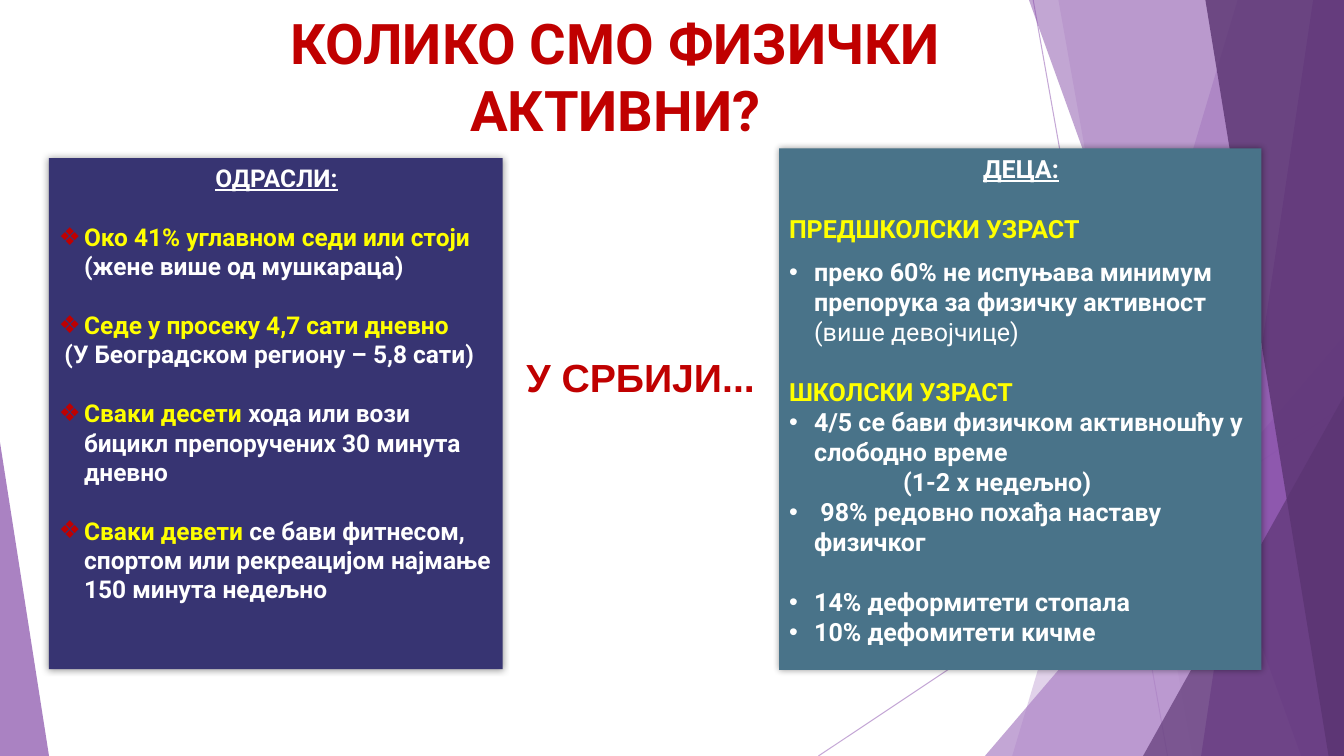
from lxml import etree
from pptx import Presentation
from pptx.dml.color import RGBColor
from pptx.enum.shapes import MSO_CONNECTOR, MSO_SHAPE
from pptx.enum.text import MSO_ANCHOR, PP_ALIGN
from pptx.oxml.ns import qn
from pptx.util import Pt

STRAIGHT = MSO_CONNECTOR.STRAIGHT
RECTANGLE = MSO_SHAPE.RECTANGLE
TRIANGLE = MSO_SHAPE.ISOSCELES_TRIANGLE
TOP, MIDDLE = MSO_ANCHOR.TOP, MSO_ANCHOR.MIDDLE
CENTER, LEFT = PP_ALIGN.CENTER, PP_ALIGN.LEFT

WHITE = RGBColor(0xFF, 0xFF, 0xFF)
YELLOW = RGBColor(0xFF, 0xFF, 0x00)
RED = RGBColor(0xC0, 0x00, 0x00)
NAVY = RGBColor(0x37, 0x34, 0x72)
TEAL = RGBColor(0x49, 0x73, 0x89)
LILAC = RGBColor(0xAD, 0x84, 0xC6)
PURPLE = RGBColor(0x87, 0x4E, 0xA9)
PLUM = RGBColor(0x5A, 0x34, 0x71)

WIDTH, HEIGHT = 960, 540
HANG = 18


def add_child(parent, tag, **attributes):
    child = etree.SubElement(parent, qn(tag))
    for name, value in attributes.items():
        child.set(name, str(value))
    return child


def set_opacity(fill, percent):
    for color in fill.iter(qn("a:srgbClr")):
        add_child(color, "a:alpha", val=percent * 1000)


def paint(shape, color, opacity=100):
    shape.shadow.inherit = False
    shape.fill.solid()
    shape.fill.fore_color.rgb = color
    shape.line.fill.background()
    if opacity < 100:
        set_opacity(shape.fill._xPr, opacity)


def add_ray(page, start, end):
    ray = page.shapes.add_connector(STRAIGHT, *map(Pt, start + end))
    ray.line.color.rgb = LILAC
    ray.line.width = Pt(0.75)
    properties = ray._element.spPr
    set_opacity(properties, 70)
    add_child(properties, "a:effectLst")


def add_band(page, box, top_x, bottom_x, color, opacity):
    left, top, width, height = box
    right, bottom = left + width, top + height
    outline = page.shapes.build_freeform(Pt(left + top_x), Pt(top))
    outline.add_line_segments(
        [(Pt(right), Pt(top)), (Pt(right), Pt(bottom)), (Pt(left + bottom_x), Pt(bottom))]
    )
    paint(outline.convert_to_shape(), color, opacity)


def add_wedge(page, box, peak, color, opacity):
    wedge = page.shapes.add_shape(TRIANGLE, *map(Pt, box))
    wedge.adjustments[0] = peak
    paint(wedge, color, opacity)


def add_backdrop(page, box):
    left, top, width, height = box
    right, bottom = left + width, top + height
    add_ray(page, (left + 738, top), (left + 834, bottom))
    add_ray(page, (right, top + 290), (left + 584.6, bottom))
    add_band(page, box, 884, 723, LILAC, 36)
    add_band(page, box, 756, 852, LILAC, 20)
    add_wedge(page, (right - 256.5, bottom - 300, 256.5, 300), 1, LILAC, 72)
    add_band(page, box, 735, 929.5, PURPLE, 50)
    add_band(page, box, 938, 858, PURPLE, 70)
    add_band(page, box, 861, 949, PLUM, 80)
    add_wedge(page, (right - 143.5, bottom - 257, 143.5, 257), 1, PLUM, 66)
    add_wedge(page, (left, bottom - 224, 35, 224), 0, PURPLE, 70)


def add_heading(page, box, text, size, font, right_inset=7.2):
    heading = page.shapes.add_textbox(*map(Pt, box))
    frame = heading.text_frame
    frame.word_wrap = True
    frame.vertical_anchor = MIDDLE
    frame.margin_right = Pt(right_inset)
    para = frame.paragraphs[0]
    para.alignment = CENTER
    para.add_run().text = text
    para.font.name = font
    para.font.size = Pt(size)
    para.font.bold = True
    para.font.color.rgb = RED


def set_indent(para, margin, bullet, bullet_color):
    properties = para._p.get_or_add_pPr()
    properties.set("marL", str(Pt(margin)))
    if bullet:
        properties.set("indent", str(-Pt(HANG)))
        color = add_child(properties, "a:buClr")
        add_child(color, "a:srgbClr", val=bullet_color)
        add_child(properties, "a:buFont", typeface="Arial")
        add_child(properties, "a:buChar", char=bullet)


def add_panel(page, box, fill, size, title, bullet, bullet_color, lines):
    panel = page.shapes.add_shape(RECTANGLE, *map(Pt, box))
    paint(panel, fill)
    effects = panel._element.spPr.find(qn("a:effectLst"))
    glow = add_child(effects, "a:outerShdw", blurRad=Pt(5), dist=0, dir=0)
    add_child(add_child(glow, "a:srgbClr", val="000000"), "a:alpha", val=40000)
    frame = panel.text_frame
    frame.word_wrap = True
    frame.vertical_anchor = TOP
    frame.margin_right = Pt(6)

    rows = [(0, None, [(title, WHITE)])] + lines
    for index, (gap, margin, parts) in enumerate(rows):
        para = frame.add_paragraph() if index else frame.paragraphs[0]
        para.alignment = LEFT if index else CENTER
        bulleted = index > 0 and margin is None
        set_indent(para, HANG if bulleted else margin or 0, bulleted and bullet, bullet_color)
        if gap:
            para.space_before = Pt(gap)
        para.font.name = "Roboto"
        para.font.size = Pt(size)
        para.font.bold = True
        para.font.underline = index == 0
        for text, color, *weight in parts:
            span = para.add_run()
            span.text = text
            span.font.color.rgb = color
            if weight:
                span.font.bold = weight[0]


ADULTS = [
    (21, None, [("Око 41% углавном седи или стоји ", YELLOW), ("(жене више од мушкараца)", WHITE)]),
    (21, None, [("Седе у просеку 4,7 сати дневно", YELLOW)]),
    (0, 4, [("(У Београдском региону – 5,8 сати)", WHITE)]),
    (21, None, [("Сваки десети ", YELLOW),
                ("хода или вози бицикл препоручених 30 минута дневно", WHITE)]),
    (21, None, [("Сваки девети", YELLOW),
                (" се бави фитнесом, спортом или рекреацијом најмање 150 минута недељно", WHITE)]),
]
CHILDREN = [
    (21.4, 0, [("ПРЕДШКОЛСКИ УЗРАСТ", YELLOW)]),
    (9.3, None, [("преко 60% не испуњава минимум препорука за физичку активност ", WHITE),
                 ("(више девојчице)", WHITE, False)]),
    (21.4, 0, [("ШКОЛСКИ УЗРАСТ", YELLOW)]),
    (0, None, [("4/5 се бави физичком активношћу у слободно време", WHITE)]),
    (0, 81.5, [("(1-2 x недељно)", WHITE)]),
    (0, None, [(" 98% редовно похађа наставу физичког", WHITE)]),
    (21.4, None, [("14% деформитети стопала", WHITE)]),
    (0, None, [("10% дефомитети кичме", WHITE)]),
]


def main():
    deck = Presentation()
    deck.slide_width, deck.slide_height = Pt(WIDTH), Pt(HEIGHT)
    page = deck.slides.add_slide(deck.slide_layouts[6])
    add_backdrop(page, (0, 0, WIDTH, HEIGHT))
    add_panel(page, (35, 113, 324, 365), NAVY, 17.5, "ОДРАСЛИ:", "❖", RED, ADULTS)
    add_panel(page, (556.5, 106, 344.5, 372.5), TEAL, 17.9, "ДЕЦА:", "•", WHITE, CHILDREN)
    add_heading(page, (296, 249, 323, 41), "У СРБИЈИ...", 28, "Arial")
    add_heading(page, (126, 1.5, 637, 104.5), "КОЛИКО СМО ФИЗИЧКИ АКТИВНИ?", 40, "Roboto", 17.2)
    deck.save("out.pptx")


if __name__ == "__main__":
    main()
